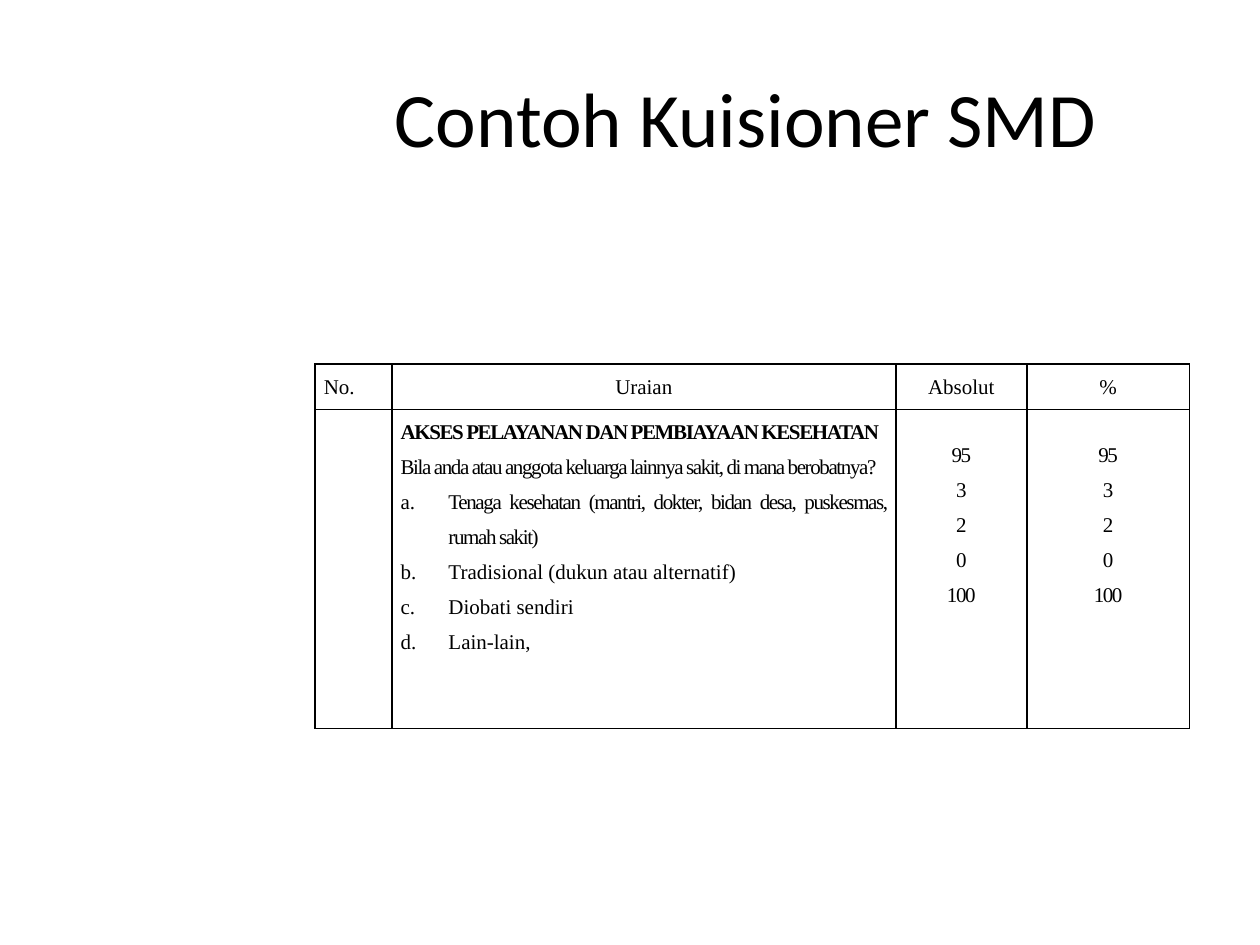
import pptx
import pptx.util
import pptx.dml.color
import pptx.enum.text
import pptx.oxml.ns
from lxml import etree

Inches = pptx.util.Inches
Pt = pptx.util.Pt
ALIGN = pptx.enum.text.PP_ALIGN
ANCHOR = pptx.enum.text.MSO_ANCHOR
BLACK = pptx.dml.color.RGBColor(0x00, 0x00, 0x00)
TIGHT = -0.8

COLUMN_WIDTHS = (0.61, 4, 1.04, 1.29)
ROW_HEIGHTS = (0.36, 2.53)
HEADINGS = ("No.", "Uraian", "Absolut", "%")
SECTION = "AKSES PELAYANAN DAN PEMBIAYAAN KESEHATAN"
QUESTION = "Bila anda atau anggota keluarga lainnya sakit, di mana berobatnya?"
ANSWERS = (
    "Tenaga kesehatan (mantri, dokter, bidan desa, puskesmas, rumah sakit)",
    "Tradisional (dukun atau alternatif)",
    "Diobati sendiri",
    "Lain-lain,",
)
COUNTS = ("95", "3", "2", "0", "100")


def add_child(parent, tag, **attributes):
    return etree.SubElement(parent, pptx.oxml.ns.qn(tag), **attributes)


def style_cell(cell):
    properties = cell._tc.get_or_add_tcPr()
    for side in ("a:lnL", "a:lnR", "a:lnT", "a:lnB"):
        border = add_child(properties, side, w=str(Pt(1)))
        add_child(add_child(border, "a:solidFill"), "a:srgbClr", val=str(BLACK))
    cell.fill.background()
    cell.margin_left = cell.margin_right = Inches(0.07)
    cell.margin_top = cell.margin_bottom = 0
    cell.vertical_anchor = ANCHOR.TOP


def write_line(cell, text, align, spacing=0, bold=False, lettered=False):
    frame = cell.text_frame
    line = frame.add_paragraph() if frame.text else frame.paragraphs[0]
    line.alignment = align
    line.line_spacing = 1.5
    if lettered:
        properties = line._p.get_or_add_pPr()
        properties.set("marL", str(Inches(0.38)))
        properties.set("indent", str(Inches(-0.38)))
        add_child(properties, "a:buFont", typeface="+mj-lt")
        add_child(properties, "a:buAutoNum", type="alphaLcPeriod")
    line.font.name = "Times New Roman"
    line.font.size = Pt(12)
    line.font.bold = bold
    line.font.color.rgb = BLACK
    run = line.add_run()
    run.text = text
    if spacing:
        run._r.get_or_add_rPr().set("spc", str(round(spacing * 100)))


def place_title(slide, left, top, width, height):
    title = slide.shapes.title
    title.left, title.top, title.width, title.height = left, top, width, height
    title.text_frame.text = "Contoh Kuisioner SMD"
    title.text_frame.vertical_anchor = ANCHOR.MIDDLE
    heading = title.text_frame.paragraphs[0]
    heading.alignment = ALIGN.CENTER
    heading.font.name = "Calibri"
    heading.font.size = Pt(44)
    heading.font.color.rgb = BLACK


def place_questionnaire(slide, left, top, width, height):
    table = slide.shapes.add_table(
        len(ROW_HEIGHTS), len(COLUMN_WIDTHS), left, top, width, height
    ).table
    table.first_row = False
    table.horz_banding = False
    for column, share in zip(table.columns, COLUMN_WIDTHS):
        column.width = round(width * share / sum(COLUMN_WIDTHS))
    for row, share in zip(table.rows, ROW_HEIGHTS):
        row.height = round(height * share / sum(ROW_HEIGHTS))
    for cell in table.iter_cells():
        style_cell(cell)

    for index, heading in enumerate(HEADINGS):
        align = ALIGN.CENTER if index else ALIGN.JUSTIFY
        write_line(table.cell(0, index), heading, align)

    description = table.cell(1, 1)
    write_line(description, SECTION, ALIGN.JUSTIFY, TIGHT, bold=True)
    write_line(description, QUESTION, ALIGN.JUSTIFY, TIGHT)
    for index, answer in enumerate(ANSWERS):
        spacing = 0 if index else TIGHT
        write_line(description, answer, ALIGN.JUSTIFY, spacing, lettered=True)

    for index in (2, 3):
        results = table.cell(1, index)
        results.margin_top = Inches(0.18)
        for count in COUNTS:
            write_line(results, count, ALIGN.CENTER, TIGHT)


def main():
    presentation = pptx.Presentation()
    presentation.slide_width = Inches(10)
    presentation.slide_height = Inches(7.5)
    slide = presentation.slides.add_slide(presentation.slide_layouts[5])
    place_title(slide, Inches(2.34), Inches(0.3), Inches(7.16), Inches(1.25))
    place_questionnaire(slide, Inches(2.5), Inches(2.89), Inches(6.94), Inches(2.89))
    presentation.save("out.pptx")


if __name__ == "__main__":
    main()
